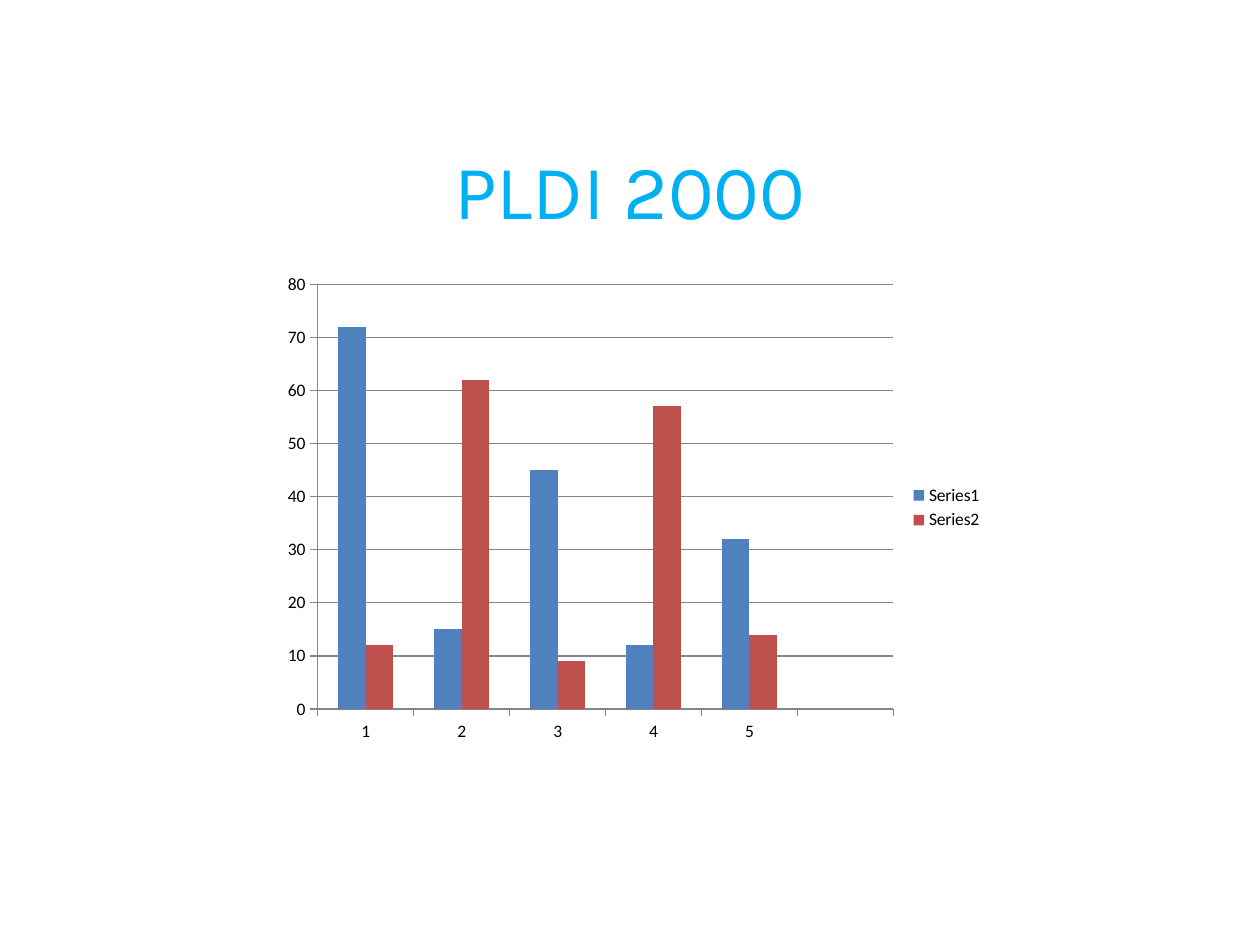
import pptx
import pptx.chart.data
import pptx.dml.color
import pptx.enum.chart
import pptx.enum.text
import pptx.util
from pptx.util import Inches

COLORS = {"title": "00B0F0", "text": "000000", "line": "868686"}
SERIES = {
    "Series1": ("4F81BD", (72, 15, 45, 12, 32, None)),
    "Series2": ("C0504D", (12, 62, 9, 57, 14, None)),
}
CATEGORIES = ("1", "2", "3", "4", "5", "")


def rgb(name):
    return pptx.dml.color.RGBColor.from_string(COLORS.get(name, name))


def style_line(line):
    line.color.rgb = rgb("line")
    line.width = pptx.util.Pt(0.75)


def add_title(page, text, left, top, width, height):
    box = page.shapes.add_textbox(left, top, width, height)
    frame = box.text_frame
    frame.word_wrap = True
    frame.vertical_anchor = pptx.enum.text.MSO_ANCHOR.MIDDLE
    frame.text = text
    para = frame.paragraphs[0]
    para.alignment = pptx.enum.text.PP_ALIGN.CENTER
    span = para.runs[0]
    span.font.name = "Karla"
    span.font.size = pptx.util.Pt(44)
    span.font.color.rgb = rgb("title")


def add_column_chart(page, left, top, width, height):
    data = pptx.chart.data.CategoryChartData()
    data.categories = CATEGORIES
    for name, (_, values) in SERIES.items():
        data.add_series(name, values)
    kind = pptx.enum.chart.XL_CHART_TYPE.COLUMN_CLUSTERED
    chart = page.shapes.add_chart(kind, left, top, width, height, data).chart
    chart.has_title = False
    chart.font.name = "Calibri"
    chart.font.size = pptx.util.Pt(10)
    chart.font.color.rgb = rgb("text")

    chart.has_legend = True
    chart.legend.position = pptx.enum.chart.XL_LEGEND_POSITION.RIGHT
    chart.legend.include_in_layout = False

    for axis in (chart.category_axis, chart.value_axis):
        axis.major_tick_mark = pptx.enum.chart.XL_TICK_MARK.OUTSIDE
        axis.minor_tick_mark = pptx.enum.chart.XL_TICK_MARK.NONE
        style_line(axis.format.line)
    scale = chart.value_axis
    scale.minimum_scale, scale.maximum_scale, scale.major_unit = 0, 80, 10
    scale.has_major_gridlines = True
    style_line(scale.major_gridlines.format.line)

    plot = chart.plots[0]
    plot.vary_by_categories = False
    plot.gap_width = 150
    plot.overlap = 0
    for series, (color, _) in zip(plot.series, SERIES.values()):
        series.format.fill.solid()
        series.format.fill.fore_color.rgb = rgb(color)


def main():
    deck = pptx.Presentation()
    deck.slide_width, deck.slide_height = Inches(10), Inches(7.5)
    page = deck.slides.add_slide(deck.slide_layouts[6])
    add_title(page, "PLDI 2000", Inches(0.5), Inches(0.87), Inches(9), Inches(1.25))
    add_column_chart(page, Inches(2.17), Inches(2.1), Inches(5.73), Inches(3.86))
    deck.save("out.pptx")


if __name__ == "__main__":
    main()
